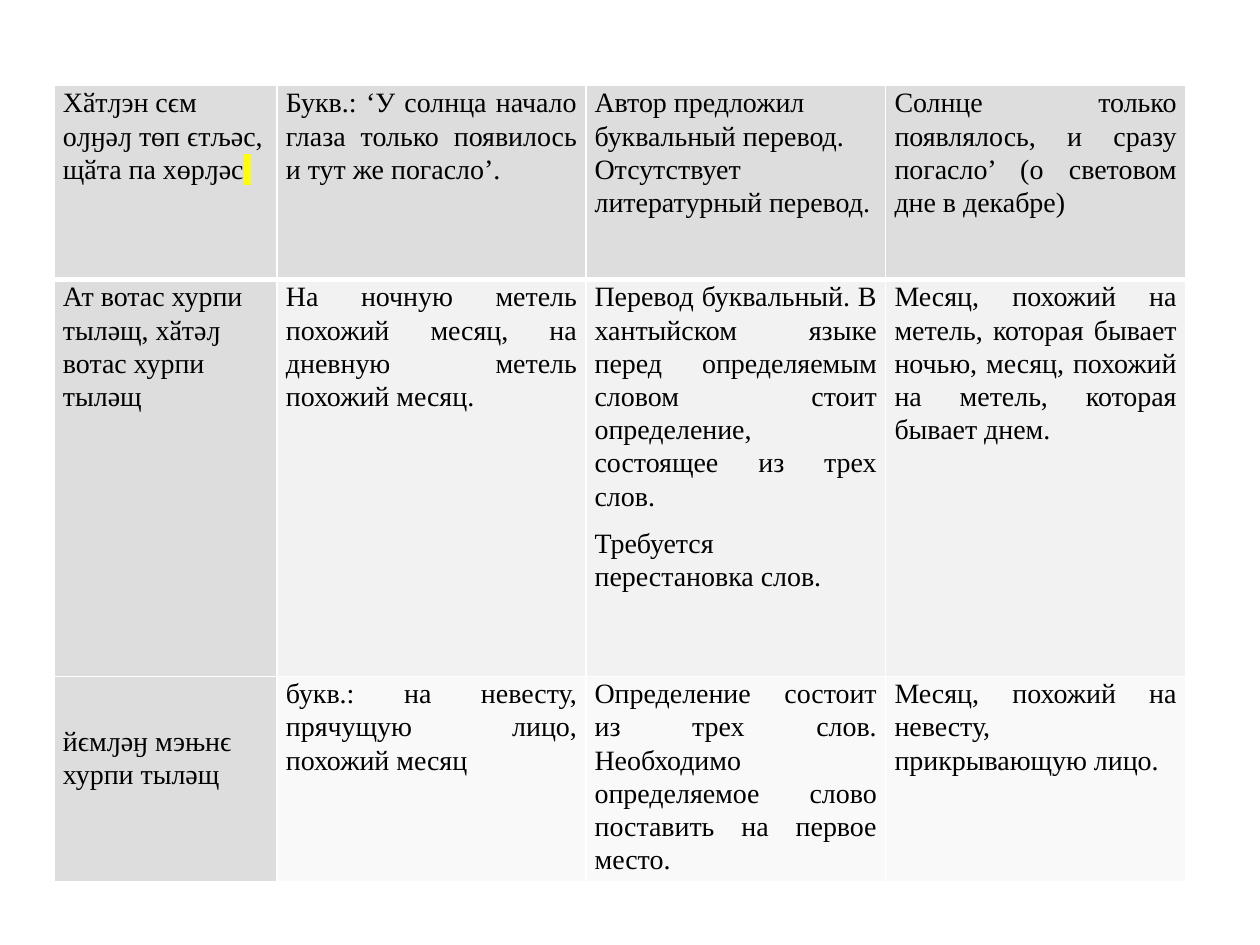
from dataclasses import dataclass

import lxml.etree
import pptx
import pptx.dml.color
import pptx.enum.text
import pptx.oxml.ns
import pptx.table
import pptx.text.text
import pptx.util
from pptx.util import Inches

COLORS = {
    "text": "000000",
    "border": "FFFFFF",
    "header": "DDDDDD",
    "band_dark": "F2F2F2",
    "band_light": "F9F9F9",
    "highlight": "FFFF00",
}
LEFT = pptx.enum.text.PP_ALIGN.LEFT
JUSTIFY = pptx.enum.text.PP_ALIGN.JUSTIFY

COLUMN_WIDTHS = [1.77, 2.45, 2.38, 2.38]
ROW_HEIGHTS = [1.54, 3.15, 1.63]
ROW_FILLS = ["header", "band_dark", "band_light"]
THIN, THICK = 1, 3


@dataclass
class CellText:
    paragraphs: list[str]
    alignment: pptx.enum.text.PP_ALIGN = JUSTIFY
    top_margin: float = 0
    highlighted_end: bool = False


ROWS = [
    [
        CellText(["Хӑтԓэн сϵм оԓӈǝԓ төп ϵтљǝс, щӑта па хөрԓǝс"], LEFT, highlighted_end=True),
        CellText(["Букв.: ‘У солнца начало глаза только появилось и тут же погасло’."]),
        CellText(["Автор предложил буквальный перевод. Отсутствует литературный перевод."], LEFT),
        CellText(["Солнце только появлялось, и сразу погасло’ (о световом дне в декабре)"]),
    ],
    [
        CellText(["Ат вотас хурпи тылǝщ, хӑтǝԓ вотас хурпи тылǝщ"], LEFT),
        CellText(["На ночную метель похожий месяц, на дневную метель похожий месяц."]),
        CellText([
            "Перевод буквальный. В хантыйском языке перед определяемым словом "
            "стоит определение, состоящее из трех слов.",
            "Требуется перестановка слов.",
        ]),
        CellText(["Месяц, похожий на метель, которая бывает ночью, месяц, "
                  "похожий на метель, которая бывает днем."]),
    ],
    [
        CellText(["йϵмԓǝӈ мэњнϵ хурпи тылǝщ"], LEFT, top_margin=0.38),
        CellText(["букв.: на невесту, прячущую лицо, похожий месяц"]),
        CellText(["Определение состоит из трех слов. Необходимо определяемое слово "
                  "поставить на первое место."]),
        CellText(["Месяц, похожий на невесту, прикрывающую лицо."]),
    ],
]


def add_solid_color(parent: lxml.etree._Element, tag: str, color: str) -> lxml.etree._Element:
    """Append a DrawingML element that holds one RGB colour."""
    element = lxml.etree.SubElement(parent, pptx.oxml.ns.qn(tag))
    lxml.etree.SubElement(element, pptx.oxml.ns.qn("a:srgbClr"), val=color)
    return element


def set_borders(cell: pptx.table._Cell, top: int, bottom: int) -> None:
    """Draw the four borders; lines must precede the fill in the cell properties."""
    properties = cell._tc.get_or_add_tcPr()
    widths = {"a:lnL": THIN, "a:lnR": THIN, "a:lnT": top, "a:lnB": bottom}
    for position, (tag, width) in enumerate(widths.items()):
        line = lxml.etree.SubElement(
            properties, pptx.oxml.ns.qn(tag), w=str(pptx.util.Pt(width))
        )
        add_solid_color(line, "a:solidFill", COLORS["border"])
        properties.insert(position, line)


def format_run(run: pptx.text.text._Run) -> None:
    run.font.name = "Times New Roman"
    run.font.size = pptx.util.Pt(16)
    run.font.bold = False
    run.font.color.rgb = pptx.dml.color.RGBColor.from_string(COLORS["text"])


def highlight_run(run: pptx.text.text._Run) -> None:
    """Highlight a formatted run; the element must follow the text fill."""
    properties = run._r.get_or_add_rPr()
    highlight = add_solid_color(properties, "a:highlight", COLORS["highlight"])
    properties.find(pptx.oxml.ns.qn("a:solidFill")).addnext(highlight)


def fill_cell(cell: pptx.table._Cell, content: CellText, fill: str) -> None:
    cell.margin_left = cell.margin_right = Inches(0.07)
    cell.margin_top = Inches(content.top_margin)
    cell.margin_bottom = 0
    cell.fill.solid()
    cell.fill.fore_color.rgb = pptx.dml.color.RGBColor.from_string(fill)
    cell.text_frame.text = "\n".join(content.paragraphs)
    for paragraph in cell.text_frame.paragraphs:
        paragraph.alignment = content.alignment
        paragraph.line_spacing = 1.07
        paragraph.space_after = pptx.util.Pt(8)
        for run in paragraph.runs:
            format_run(run)
    if content.highlighted_end:
        run = cell.text_frame.paragraphs[-1].add_run()
        run.text = " "
        format_run(run)
        highlight_run(run)


def main() -> None:
    presentation = pptx.Presentation()
    presentation.slide_width = Inches(10)
    presentation.slide_height = Inches(7.5)
    slide = presentation.slides.add_slide(presentation.slide_layouts[6])

    table = slide.shapes.add_table(
        len(ROW_HEIGHTS), len(COLUMN_WIDTHS), Inches(0.43), Inches(0.68),
        Inches(sum(COLUMN_WIDTHS)), Inches(sum(ROW_HEIGHTS)),
    ).table
    table.first_row = table.horz_banding = False
    for column, width in zip(table.columns, COLUMN_WIDTHS):
        column.width = Inches(width)
    for row, height in zip(table.rows, ROW_HEIGHTS):
        row.height = Inches(height)

    for row_index, contents in enumerate(ROWS):
        for column_index, content in enumerate(contents):
            cell = table.cell(row_index, column_index)
            fill = "header" if column_index == 0 else ROW_FILLS[row_index]
            fill_cell(cell, content, COLORS[fill])
            set_borders(
                cell,
                top=THICK if row_index == 1 else THIN,
                bottom=THICK if row_index == 0 else THIN,
            )

    presentation.save("out.pptx")


if __name__ == "__main__":
    main()
